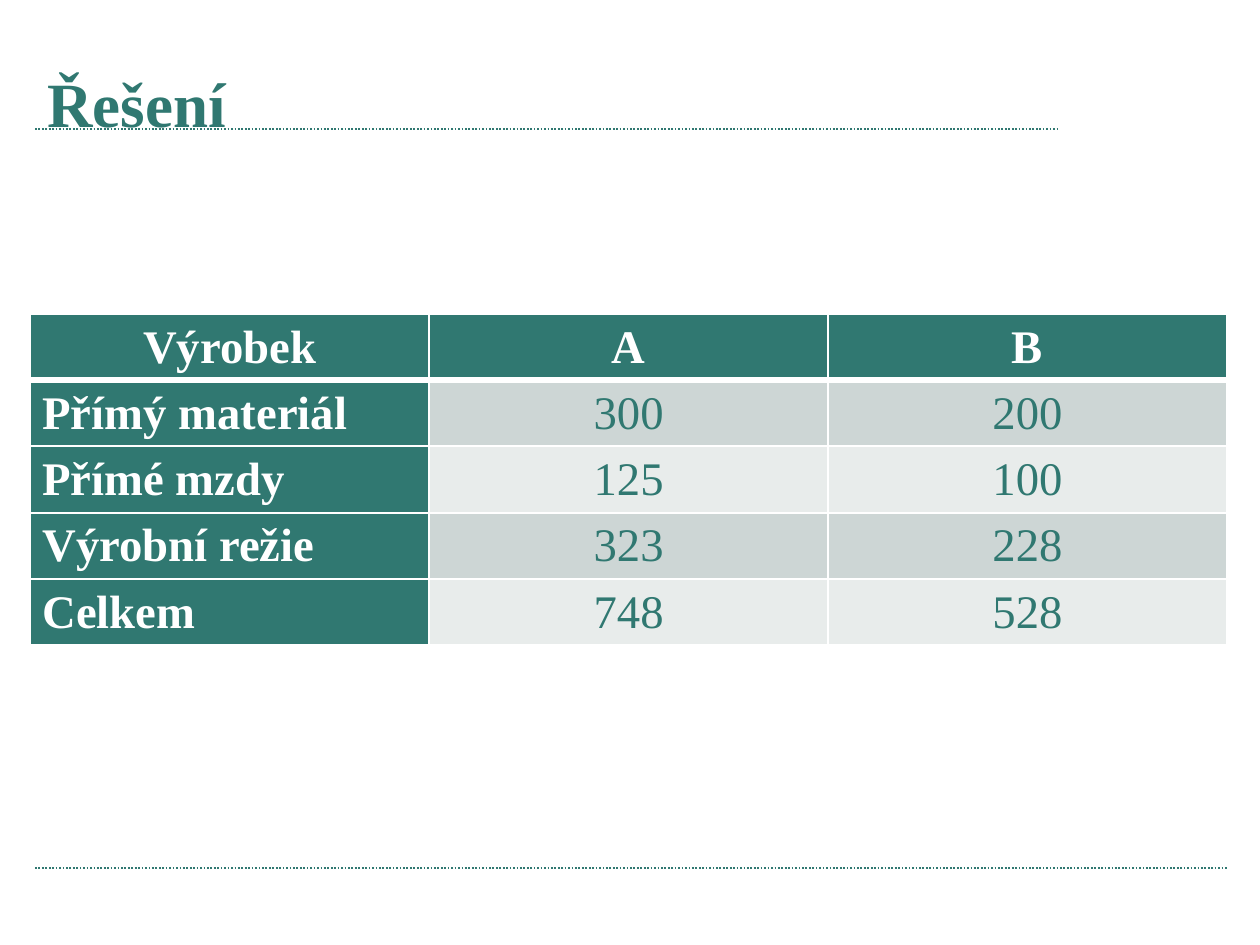
import dataclasses

import lxml.etree
import pptx
import pptx.dml.color
import pptx.enum.dml
import pptx.enum.shapes
import pptx.enum.text
import pptx.oxml.ns
import pptx.util
from pptx.util import Cm


@dataclasses.dataclass(frozen=True)
class Theme:
    """Colours, font and type sizes of the slide."""
    teal: str = "307871"
    white: str = "FFFFFF"
    bands: tuple = ("CDD6D5", "E8ECEB")
    font: str = "Times New Roman"
    title_size: int = 27
    table_size: int = 20


THEME = Theme()
COSTS = [
    ("Výrobek", "A", "B"),
    ("Přímý materiál", "300", "200"),
    ("Přímé mzdy", "125", "100"),
    ("Výrobní režie", "323", "228"),
    ("Celkem", "748", "528"),
]


def rgb(color):
    """Turn a hex string into a colour."""
    return pptx.dml.color.RGBColor.from_string(color)


def sub(parent, tag, **attrs):
    """Append a DrawingML element to a parent."""
    return lxml.etree.SubElement(parent, pptx.oxml.ns.qn(tag), attrs)


def add_run(p, text, size, color, bold):
    """Add one formatted run to a paragraph."""
    r = p.add_run()
    r.text = text
    r.font.name = THEME.font
    r.font.size = pptx.util.Pt(size)
    r.font.bold = bold
    r.font.color.rgb = rgb(color)


def add_title(s, text):
    """Place and fill the title placeholder."""
    sp = s.shapes.title
    sp.left, sp.top, sp.width, sp.height = Cm(0.46), Cm(0.74), Cm(16.79), Cm(1.5)
    tf = sp.text_frame
    tf.word_wrap = True
    tf.auto_size = pptx.enum.text.MSO_AUTO_SIZE.NONE
    tf.vertical_anchor = pptx.enum.text.MSO_ANCHOR.BOTTOM
    p = tf.paragraphs[0]
    p.alignment = pptx.enum.text.PP_ALIGN.LEFT
    add_run(p, text, THEME.title_size, THEME.teal, True)


def add_rule(s, right, y):
    """Draw a dotted horizontal rule from the left margin."""
    straight = pptx.enum.shapes.MSO_CONNECTOR.STRAIGHT
    cxn = s.shapes.add_connector(straight, Cm(0.53), y, right, y)
    cxn.line.color.rgb = rgb(THEME.teal)
    cxn.line.width = pptx.util.Pt(0.75)
    cxn.line.dash_style = pptx.enum.dml.MSO_LINE.ROUND_DOT
    sub(cxn._element.spPr, "a:effectLst")


def set_borders(cell, widths):
    """Give a cell white borders, with widths in points by side."""
    tcPr = cell._tc.get_or_add_tcPr()
    for side, width in widths.items():
        ln = sub(tcPr, f"a:ln{side}", w=str(pptx.util.Pt(width)))
        sub(sub(ln, "a:solidFill"), "a:srgbClr", val=THEME.white)


def fill_cell(cell, text, row, col):
    """Write and style one cell by its place in the table."""
    heading = row == 0 or col == 0
    head_line = 3
    set_borders(cell, {"L": 1, "R": 1, "T": head_line if row == 1 else 1,
                       "B": head_line if row == 0 else 1})
    cell.fill.solid()
    cell.fill.fore_color.rgb = rgb(THEME.teal if heading else THEME.bands[(row - 1) % 2])
    cell.margin_left = cell.margin_right = Cm(0.18)
    cell.margin_top = cell.margin_bottom = 0
    p = cell.text_frame.paragraphs[0]
    align = pptx.enum.text.PP_ALIGN
    p.alignment = align.LEFT if row and col == 0 else align.CENTER
    p.line_spacing = 1.15
    add_run(p, text, THEME.table_size, THEME.white if heading else THEME.teal, heading)


def add_cost_table(s, rows):
    """Add the table of costs per product."""
    n_rows, n_cols = len(rows), len(rows[0])
    col_width, row_height = Cm(6.03), Cm(1)
    frame = s.shapes.add_table(n_rows, n_cols, Cm(0.46), Cm(4.75),
                               col_width * n_cols, row_height * n_rows)
    for i, row in enumerate(rows):
        for j, text in enumerate(row):
            fill_cell(frame.table.cell(i, j), text, i, j)


def main():
    """Build and save the slide."""
    prs = pptx.Presentation()
    prs.slide_width, prs.slide_height = Cm(19.05), Cm(14.29)
    s = prs.slides.add_slide(prs.slide_layouts.get_by_name("Title Only"))
    add_rule(s, Cm(15.98), Cm(1.95))
    add_rule(s, Cm(18.57), Cm(13.13))
    add_title(s, "Řešení")
    add_cost_table(s, COSTS)
    prs.save("out.pptx")


if __name__ == "__main__":
    main()
